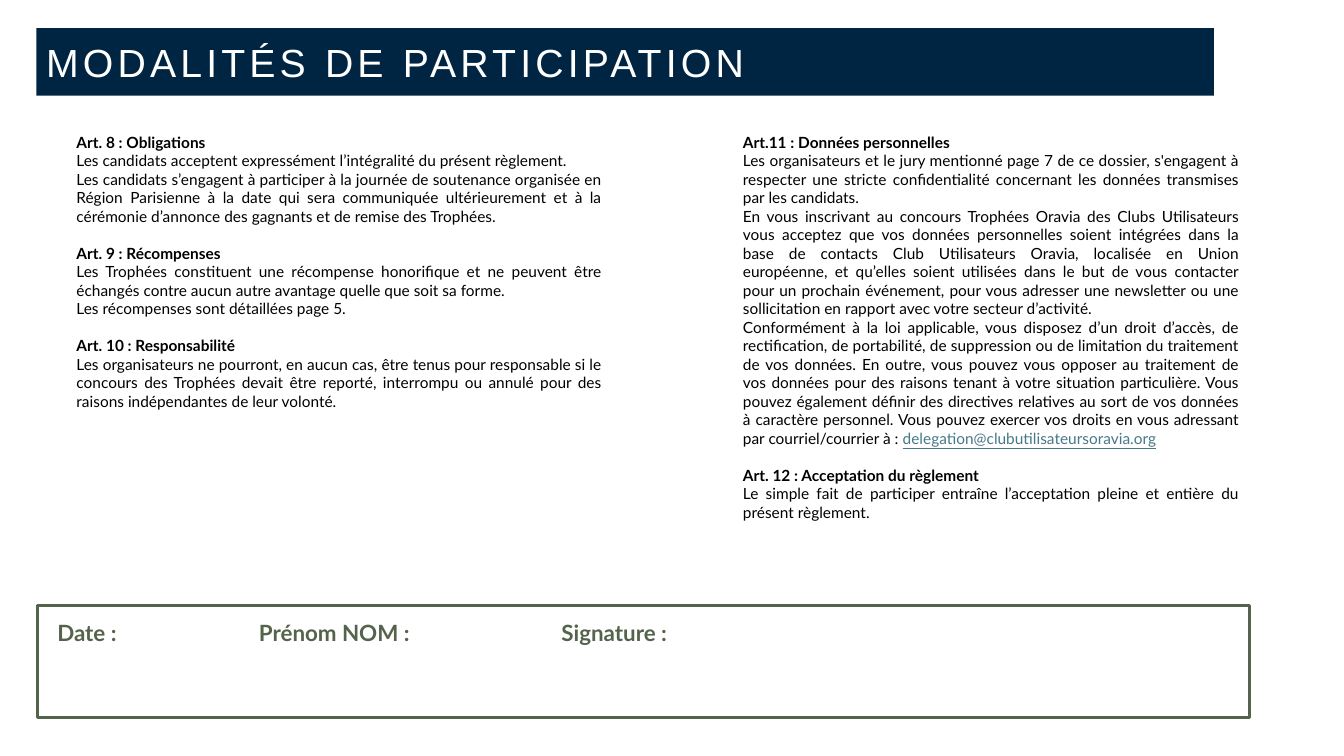
from lxml.etree import SubElement
from pptx import Presentation
from pptx.dml.color import RGBColor
from pptx.enum.shapes import MSO_SHAPE as Shape
from pptx.enum.text import MSO_ANCHOR as Anchor, PP_ALIGN as Align
from pptx.oxml.ns import qn
from pptx.util import Inches, Pt

COLORS = {"navy": "002542", "white": "FFFFFF", "text": "000000",
          "email": "467886", "green": "54644C"}

EMAIL = "delegation@clubutilisateursoravia.org"

# Each article: heading, then its paragraphs
ARTICLES_LEFT = [
    ("Art. 8 : Obligations", [
        "Les candidats acceptent expressément l’intégralité du présent règlement.",
        "Les candidats s’engagent à participer à la journée de soutenance organisée en "
        "Région Parisienne à la date qui sera communiquée ultérieurement et à la "
        "cérémonie d’annonce des gagnants et de remise des Trophées."]),
    ("Art. 9 : Récompenses", [
        "Les Trophées constituent une récompense honorifique et ne peuvent être "
        "échangés contre aucun autre avantage quelle que soit sa forme.",
        "Les récompenses sont détaillées page 5."]),
    ("Art. 10 : Responsabilité", [
        "Les organisateurs ne pourront, en aucun cas, être tenus pour responsable si le "
        "concours des Trophées devait être reporté, interrompu ou annulé pour des "
        "raisons indépendantes de leur volonté."]),
]
ARTICLES_RIGHT = [
    ("Art.11 : Données personnelles", [
        "Les organisateurs et le jury mentionné page 7 de ce dossier, s'engagent à "
        "respecter une stricte confidentialité concernant les données transmises par "
        "les candidats.",
        "En vous inscrivant au concours Trophées Oravia des Clubs Utilisateurs vous "
        "acceptez que vos données personnelles soient intégrées dans la base de contacts "
        "Club Utilisateurs Oravia, localisée en Union européenne, et qu’elles soient "
        "utilisées dans le but de vous contacter pour un prochain événement, pour vous "
        "adresser une newsletter ou une sollicitation en rapport avec votre secteur "
        "d’activité.",
        "Conformément à la loi applicable, vous disposez d’un droit d’accès, de "
        "rectification, de portabilité, de suppression ou de limitation du traitement de "
        "vos données. En outre, vous pouvez vous opposer au traitement de vos données "
        "pour des raisons tenant à votre situation particulière. Vous pouvez également "
        "définir des directives relatives au sort de vos données à caractère personnel. "
        "Vous pouvez exercer vos droits en vous adressant par courriel/courrier à : "
        + EMAIL]),
    ("Art. 12 : Acceptation du règlement", [
        "Le simple fait de participer entraîne l’acceptation pleine et entière du "
        "présent règlement."]),
]
SIGNATURE_FIELDS = ["Date :", "Prénom NOM :", "Signature :"]
FIELD_STOPS = [2, 5]


def color(name):
    return RGBColor.from_string(COLORS[name])


def add_run(paragraph, text, size, color_name, font="Lato", bold=False):
    run = paragraph.add_run()
    run.text = text
    run.font.name = font
    run.font.size = Pt(size)
    run.font.bold = bold
    run.font.color.rgb = color(color_name)
    return run


def add_rectangle(slide, box):
    rectangle = slide.shapes.add_shape(Shape.RECTANGLE, *map(Inches, box))
    rectangle.shadow.inherit = False
    return rectangle


def add_text_frame(slide, box):
    frame = slide.shapes.add_textbox(*map(Inches, box)).text_frame
    frame.word_wrap = True
    return frame


def add_title_banner(slide, box, title):
    banner = add_rectangle(slide, box)
    banner.fill.solid()
    banner.fill.fore_color.rgb = color("navy")
    banner.line.fill.background()
    banner.text_frame.vertical_anchor = Anchor.MIDDLE
    heading = banner.text_frame.paragraphs[0]
    heading.alignment = Align.LEFT
    run = add_run(heading, title, 28, "white", "Arial")
    run.font._element.set("spc", "300")  # letter spacing of 3 pt


def add_articles(slide, box, articles):
    frame = add_text_frame(slide, box)
    for index, (heading, body) in enumerate(articles):
        paragraph = frame.add_paragraph() if index else frame.paragraphs[0]
        paragraph.alignment = Align.JUSTIFY
        if index:
            paragraph.space_before = Pt(13.2)
        add_run(paragraph, heading, 11, "text", bold=True)
        for text in body:
            paragraph = frame.add_paragraph()
            paragraph.alignment = Align.JUSTIFY
            before, email, _ = text.partition(EMAIL)
            add_run(paragraph, before, 11, "text")
            if email:
                add_run(paragraph, email, 11, "email").font.underline = True


def add_signature_area(slide, box, fields):
    left, top, width, _ = box
    # Frame to be signed
    border = add_rectangle(slide, box)
    border.fill.background()
    border.line.color.rgb = color("green")
    border.line.width = Pt(2.25)

    # Field labels on tab stops
    frame = add_text_frame(slide, (left + 0.1, top + 0.08, width - 0.2, 0.37))
    labels = frame.paragraphs[0]
    tab_list = SubElement(labels._p.get_or_add_pPr(), qn("a:tabLst"))
    for stop in FIELD_STOPS:
        SubElement(tab_list, qn("a:tab"), pos=str(Inches(stop)), algn="l")
    add_run(labels, "\t".join(fields), 16, "green", bold=True)


def main():
    deck = Presentation()
    deck.slide_width, deck.slide_height = Inches(13.33), Inches(7.5)
    slide = deck.slides.add_slide(deck.slide_layouts[6])

    add_title_banner(slide, (0.36, 0.28, 11.68, 0.67), "MODALITÉS DE PARTICIPATION")
    add_articles(slide, (0.66, 1.27, 5.41, 5.16), ARTICLES_LEFT)
    add_articles(slide, (7.27, 1.27, 5.12, 4.16), ARTICLES_RIGHT)
    add_signature_area(slide, (0.37, 6.01, 12.02, 1.11), SIGNATURE_FIELDS)

    deck.save("out.pptx")


if __name__ == "__main__":
    main()
